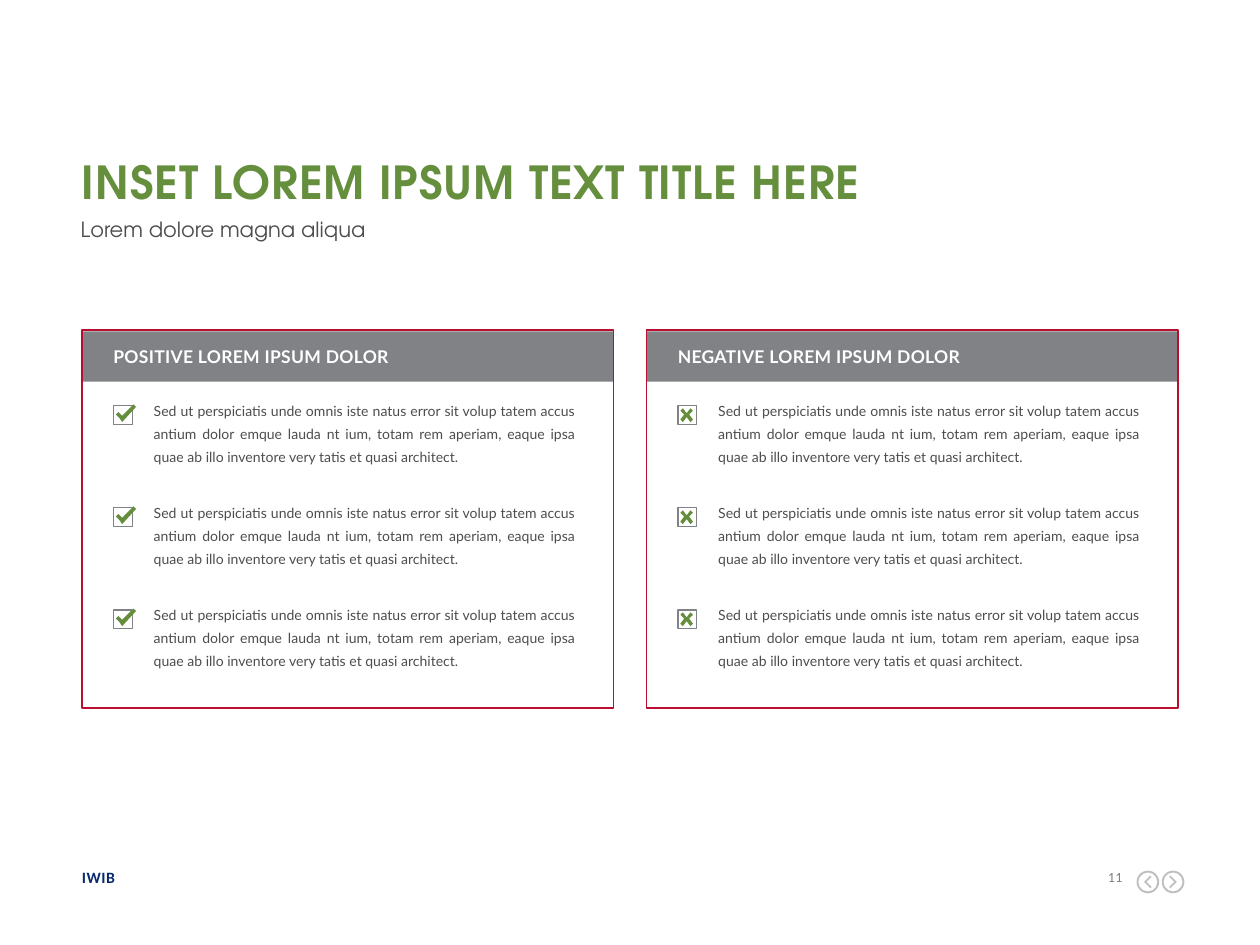
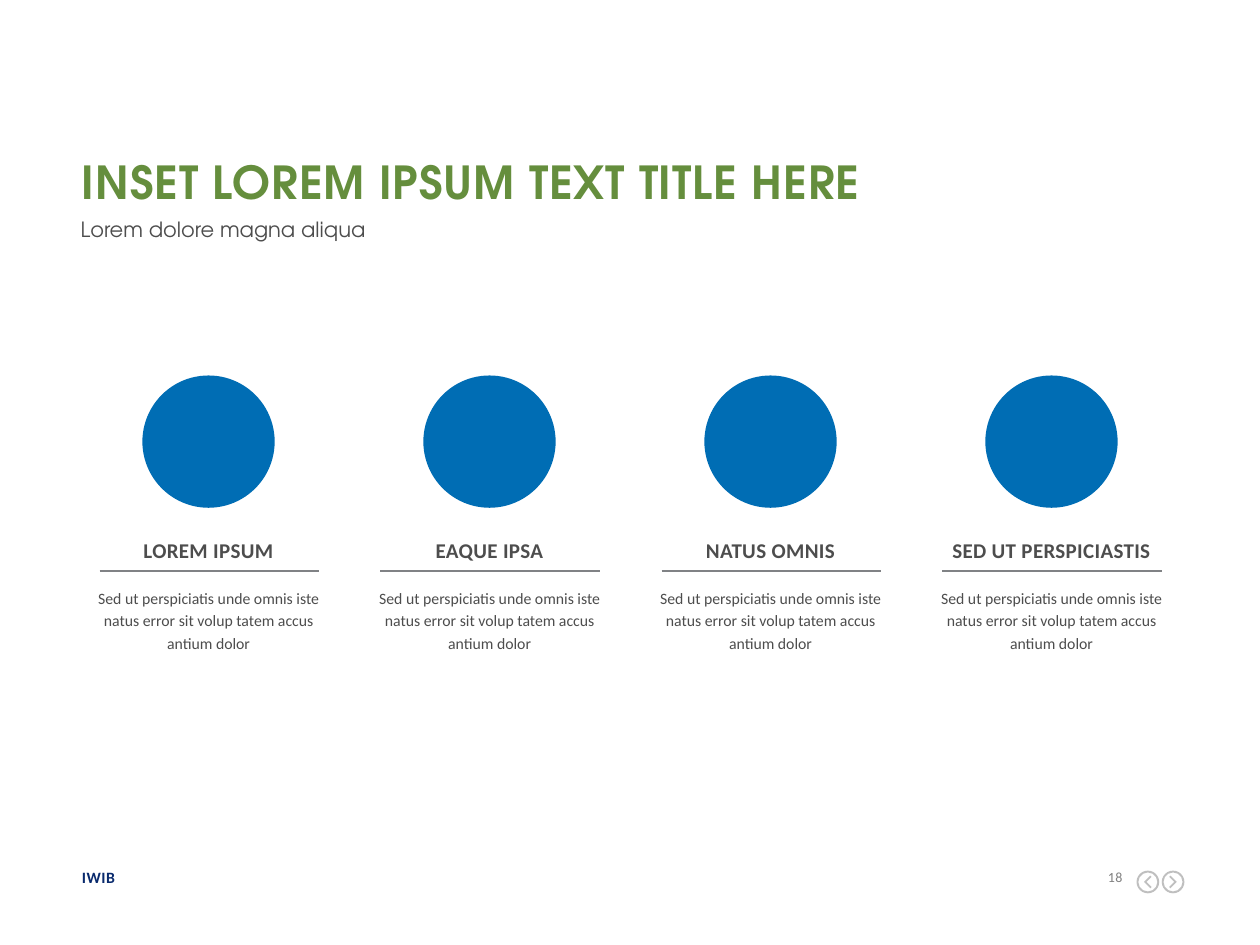
from pptx import Presentation
from pptx.dml.color import RGBColor as Rgb
from pptx.enum.shapes import MSO_CONNECTOR as Link, MSO_SHAPE as Kind
from pptx.enum.text import MSO_ANCHOR as Anchor, MSO_AUTO_SIZE as Fit, PP_ALIGN as Align
from pptx.oxml.ns import qn
from pptx.util import Inches, Pt

HUES = {
    "green": "658E3C", "title": "658E3D", "ink": "4D4D4D", "gray": "808285",
    "red": "B90E30", "blue": "006DB4", "navy": "092A6D", "page": "808080",
    "icon": "BFBFBF", "white": "FFFFFF",
}
HEAD, BODY, CARD = "TeX Gyre Adventor", "Calibri", "Lato"

TICK = [(0.04, 0.05), (0.07, 0.08), (0.16, -0.01), (0.18, 0.01),
        (0.07, 0.13), (0.05, 0.1), (0.02, 0.07)]
CROSS = [(0.02, 0.11), (0.05, 0.07), (0.02, 0.04), (0.04, 0.02),
         (0.07, 0.06), (0.1, 0.02), (0.12, 0.04), (0.09, 0.07),
         (0.12, 0.11), (0.1, 0.13), (0.07, 0.09), (0.04, 0.13)]
NEXT = [(0.06, 0.05), (0.1, 0.09), (0.06, 0.13), (0.07, 0.14),
        (0.12, 0.09), (0.07, 0.04)]
ICON = 0.18
BACK = [(ICON - x, y) for x, y in NEXT]

CLAIM = ("Sed ut perspiciatis unde omnis iste natus error sit volup tatem accus "
         "antium dolor emque lauda nt ium, totam rem aperiam, eaque ipsa quae ab "
         "illo inventore very tatis et quasi architect.")
BLURB = ("Sed ut perspiciatis unde omnis iste natus error sit volup tatem accus "
         "antium dolor")


def hue(name):
    return Rgb.from_string(HUES[name])


def write(shape, text, size, font, color, bold=False, track=0,
          align=Align.LEFT, lead=None, after=0):
    frame = shape.text_frame
    frame.margin_left = frame.margin_right = 0
    frame.margin_top = frame.margin_bottom = 0
    frame.word_wrap = True
    frame.auto_size = Fit.NONE
    frame.vertical_anchor = Anchor.TOP
    para = frame.paragraphs[0]
    para.alignment = align
    para.space_after = Pt(after)
    if lead:
        para.line_spacing = Pt(lead)
    run = para.add_run()
    run.text = text
    run.font.size = Pt(size)
    run.font.name = font
    run.font.bold = bold
    run.font.color.rgb = hue(color)
    if track:
        run._r.get_or_add_rPr().set("spc", str(round(track * 100)))


def label(slide, x, y, w, h, text, size, font, color, **style):
    box = slide.shapes.add_textbox(Inches(x), Inches(y), Inches(w), Inches(h))
    write(box, text, size, font, color, **style)


def paint(shape, fill=None, line=None):
    shape.shadow.inherit = False
    if fill:
        shape.fill.solid()
        shape.fill.fore_color.rgb = hue(fill)
    else:
        shape.fill.background()
    if line:
        shape.line.color.rgb = hue(line)
        shape.line.width = Pt(0.75)
    else:
        shape.line.fill.background()


def block(slide, kind, x, y, w, h, fill=None, line=None):
    shape = slide.shapes.add_shape(kind, Inches(x), Inches(y), Inches(w), Inches(h))
    paint(shape, fill, line)
    return shape


def glyph(slide, x, y, points, fill):
    spots = [(Inches(x + dx), Inches(y + dy)) for dx, dy in points]
    pen = slide.shapes.build_freeform(*spots[0])
    pen.add_line_segments(spots[1:], close=True)
    paint(pen.convert_to_shape(), fill)


def rule(slide, x, y, w):
    line = slide.shapes.add_connector(
        Link.STRAIGHT, Inches(x), Inches(y), Inches(x + w), Inches(y))
    line.line.color.rgb = hue("gray")
    line.line.width = Pt(1)
    props = line._element.spPr
    props.append(props.makeelement(qn("a:effectLst"), {}))


def button(slide, x, points):
    ring = block(slide, Kind.DONUT, x, 6.91, ICON, ICON, "icon")
    ring.adjustments[0] = 0.08
    glyph(slide, x, 6.91, points, "icon")


def start(deck, page):
    slide = deck.slides.add_slide(deck.slide_layouts[5])
    title = slide.shapes.title
    title.left, title.top = Inches(0.65), Inches(1.22)
    title.width, title.height = Inches(8.7), Inches(0.34)
    write(title, "INSET LOREM IPSUM TEXT TITLE HERE", 26, HEAD, "title",
          bold=True, track=0.5)
    label(slide, 0.64, 1.75, 8.7, 0.42, "Lorem dolore magna aliqua", 12, HEAD,
          "ink", lead=12)
    label(slide, 0.65, 6.89, 1.95, 0.15, "IWIB", 9, BODY, "navy",
          bold=True, track=0.3)
    label(slide, 8.68, 6.89, 0.23, 0.13, page, 8, BODY, "page",
          track=0.3, align=Align.RIGHT)
    button(slide, 9.02, BACK)
    button(slide, 9.22, NEXT)
    return slide


def card(slide, x, head, mark):
    block(slide, Kind.RECTANGLE, x, 2.63, 4.22, 0.4, "gray")
    block(slide, Kind.RECTANGLE, x, 2.62, 4.22, 3, line="red")
    style = dict(align=Align.JUSTIFY, lead=13, after=12)
    label(slide, x + 0.25, 2.73, 3.67, 0.17, head, 10, CARD, "white",
          bold=True, track=0.2, **style)
    for row in range(3):
        y = 3.15 + row * 0.81
        block(slide, Kind.RECTANGLE, x + 0.25, y + 0.07, 0.15, 0.15, line="gray")
        glyph(slide, x + 0.25, y + 0.07, mark, "green")
        label(slide, x + 0.57, y, 3.35, 0.53, CLAIM, 8, CARD, "ink", **style)


def topic(slide, x, head):
    style = dict(align=Align.CENTER, after=6)
    block(slide, Kind.OVAL, x + 0.37, 2.98, 1.05, 1.05, "blue")
    label(slide, x, 4.23, 1.79, 0.22, head, 12, BODY, "ink",
          bold=True, track=0.2, lead=17, **style)
    rule(slide, x + 0.03, 4.53, 1.74)
    label(slide, x, 4.64, 1.79, 0.53, BLURB, 9, BODY, "ink", lead=13, **style)


def main():
    deck = Presentation()
    deck.slide_width, deck.slide_height = Inches(10), Inches(7.5)

    slide = start(deck, "11")
    card(slide, 0.65, "POSITIVE LOREM IPSUM DOLOR", TICK)
    card(slide, 5.13, "NEGATIVE LOREM IPSUM DOLOR", CROSS)

    slide = start(deck, "18")
    heads = ["LOREM IPSUM", "EAQUE IPSA", "NATUS OMNIS", "SED UT PERSPICIASTIS"]
    for col, head in enumerate(heads):
        topic(slide, 0.76 + col * 2.23, head)

    deck.save("out.pptx")


if __name__ == "__main__":
    main()
